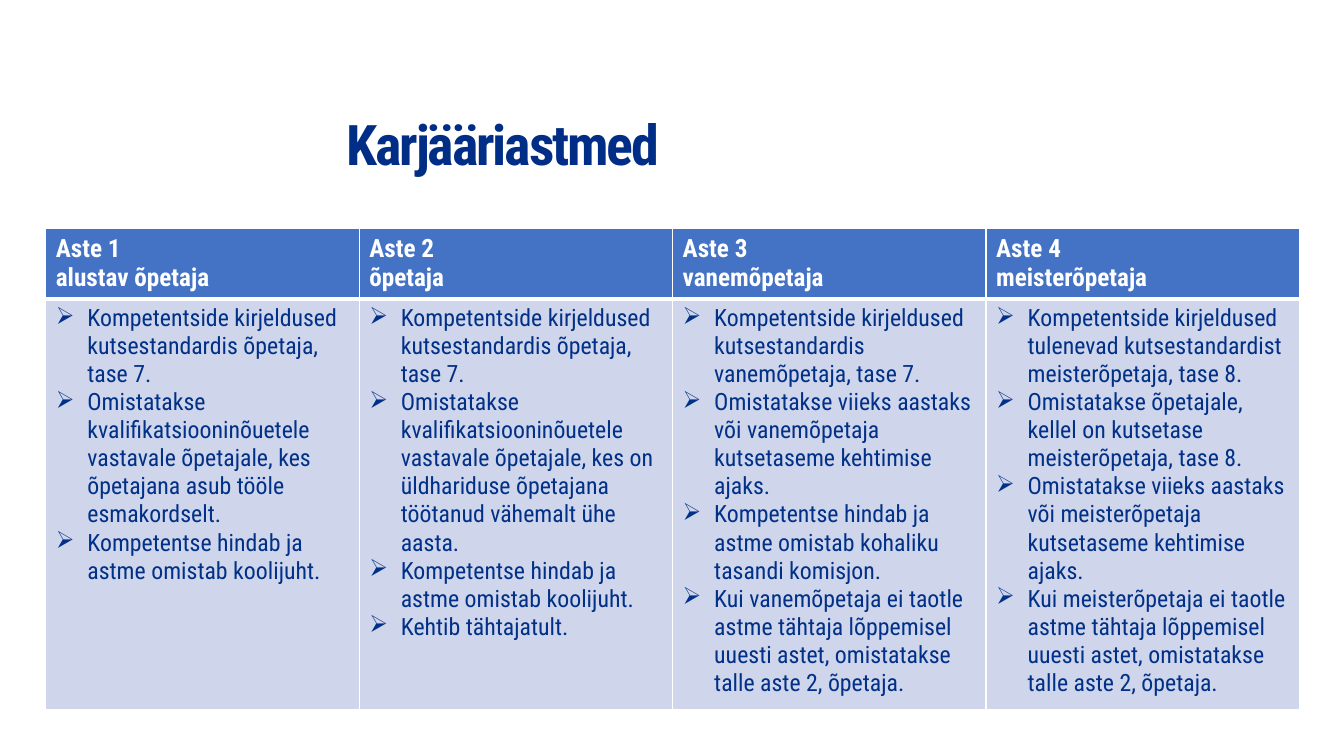
"""Build the slide on the four career stages of a teacher."""
from lxml import etree
from pptx import Presentation
from pptx import util as u
from pptx.dml.color import RGBColor
from pptx.enum import text
from pptx.oxml.ns import qn

TITLE = "Karjääriastmed"
JUHT = "Kompetentse hindab ja astme omistab koolijuht."
STAGES = [
    ("Aste 1", "alustav õpetaja", [
        "Kompetentside kirjeldused kutsestandardis õpetaja, tase 7.",
        "Omistatakse kvalifikatsiooninõuetele vastavale õpetajale, kes õpetajana asub tööle esmakordselt.",
        JUHT,
    ]),
    ("Aste 2", "õpetaja", [
        "Kompetentside kirjeldused kutsestandardis õpetaja, tase 7.",
        "Omistatakse kvalifikatsiooninõuetele vastavale õpetajale, kes on üldhariduse õpetajana "
        "töötanud vähemalt ühe aasta.",
        JUHT,
        "Kehtib tähtajatult.",
    ]),
    ("Aste 3", "vanemõpetaja", [
        "Kompetentside kirjeldused kutsestandardis vanemõpetaja, tase 7.",
        "Omistatakse viieks aastaks või vanemõpetaja kutsetaseme kehtimise ajaks.",
        "Kompetentse hindab ja astme omistab kohaliku tasandi komisjon.",
        "Kui vanemõpetaja ei taotle astme tähtaja lõppemisel uuesti astet, omistatakse talle "
        "aste 2, õpetaja.",
    ]),
    ("Aste 4", "meisterõpetaja", [
        "Kompetentside kirjeldused tulenevad kutsestandardist meisterõpetaja, tase 8.",
        "Omistatakse õpetajale, kellel on kutsetase meisterõpetaja, tase 8.",
        "Omistatakse viieks aastaks või meisterõpetaja kutsetaseme kehtimise ajaks.",
        "Kui meisterõpetaja ei taotle astme tähtaja lõppemisel uuesti astet, omistatakse talle "
        "aste 2, õpetaja.",
    ]),
]
COLORS = {"title": "002E87", "body": "003087", "white": "FFFFFF",
          "head_fill": "4472C4", "body_fill": "CFD5EA"}
FONTS = {
    "title": {"size": u.Pt(40), "bold": True},
    "head": {"size": u.Pt(18), "bold": True},
    "body": {"size": u.Pt(17), "bold": False},
}
TITLE_BOX = (247.7, 83.5, 320.4, 43.9)
TABLE_BOX = (32.7, 163.4, 895.6, 336.5)
ROW_HEIGHTS = (48.5, 288)
INDENT = 22.5


def style_run(r, kind, color):
    for name, value in FONTS[kind].items():
        setattr(r.font, name, value)
    r.font.name = "Roboto Condensed"
    r.font.color.rgb = RGBColor.from_string(COLORS[color])


def add_bullet(p):
    pPr = p._p.get_or_add_pPr()
    pPr.set("marL", str(u.Pt(INDENT)))
    pPr.set("indent", str(-u.Pt(INDENT)))
    etree.SubElement(pPr, qn("a:buChar")).set("char", "➢")


def add_borders(cell, top, bottom):
    tcPr = cell._tc.get_or_add_tcPr()
    for side, width in (("L", 1), ("R", 1), ("T", top), ("B", bottom)):
        ln = etree.SubElement(tcPr, qn(f"a:ln{side}"), w=str(u.Pt(width)))
        fill = etree.SubElement(ln, qn("a:solidFill"))
        etree.SubElement(fill, qn("a:srgbClr")).set("val", COLORS["white"])


def fill_cell(cell, lines, kind, color, borders):
    add_borders(cell, *borders)
    cell.fill.solid()
    cell.fill.fore_color.rgb = RGBColor.from_string(COLORS[f"{kind}_fill"])
    tf = cell.text_frame
    tf.text = "\n".join(lines)
    for p in tf.paragraphs:
        if kind == "body":
            add_bullet(p)
        style_run(p.runs[0], kind, color)


def add_title(s):
    tf = s.shapes.add_textbox(*map(u.Pt, TITLE_BOX)).text_frame
    settings = {"word_wrap": True, "vertical_anchor": text.MSO_ANCHOR.MIDDLE,
                "margin_left": 0, "margin_right": 0, "margin_top": 0, "margin_bottom": 0}
    for name, value in settings.items():
        setattr(tf, name, value)
    p = tf.paragraphs[0]
    p.line_spacing = 0.9
    r = p.add_run()
    r.text = TITLE
    style_run(r, "title", "title")
    r._r.get_or_add_rPr().set("spc", "-150")


def add_stages(s):
    table = s.shapes.add_table(2, len(STAGES), *map(u.Pt, TABLE_BOX)).table
    for row, height in zip(table.rows, ROW_HEIGHTS):
        row.height = u.Pt(height)
    for col, (stage, role, points) in enumerate(STAGES):
        fill_cell(table.cell(0, col), (stage, role), "head", "white", (1, 3))
        fill_cell(table.cell(1, col), points, "body", "body", (3, 1))


def main():
    prs = Presentation()
    prs.slide_width, prs.slide_height = u.Pt(960), u.Pt(540)
    s = prs.slides.add_slide(prs.slide_layouts[6])
    add_title(s)
    add_stages(s)
    prs.save("out.pptx")


if __name__ == "__main__":
    main()
